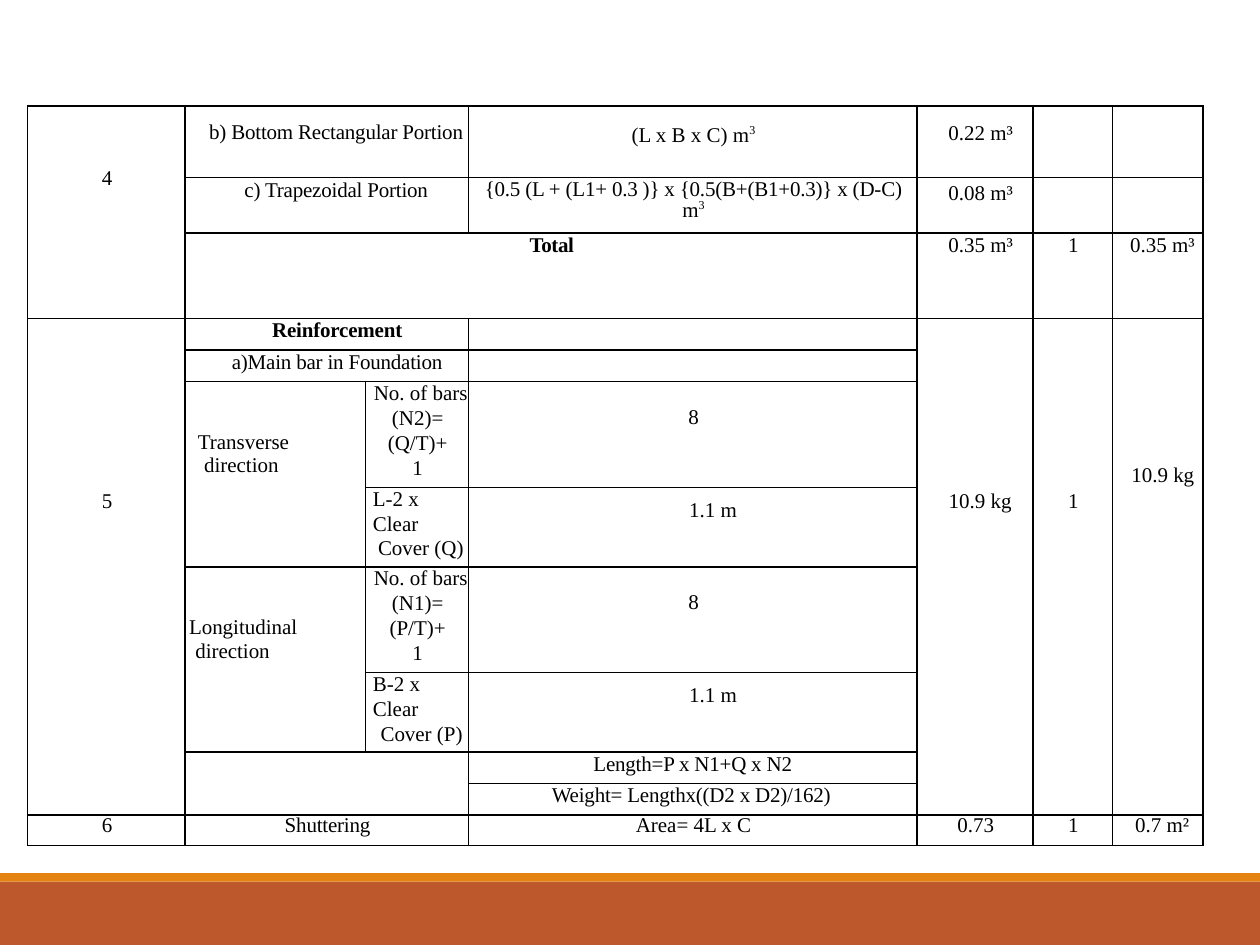
from dataclasses import dataclass

import pptx
import pptx.dml.color
import pptx.enum.shapes
import pptx.enum.text
import pptx.oxml
import pptx.oxml.ns
import pptx.util
from lxml import etree

SLIDE_W, SLIDE_H = 10, 7.5
FONT, TEXT_SIZE = "Times New Roman", 12
TABLE_LEFT, TABLE_TOP = 0.022 * SLIDE_W, 0.112 * SLIDE_H
COLUMNS = [1.25, 1.43, 0.82, 3.56, 0.92, 0.63, 0.72]
ROWS = [0.57, 0.44, 0.68, 0.25, 0.25, 0.84, 0.63, 0.84, 0.63, 0.25, 0.25, 0.24]
ALIGN = {
    "l": pptx.enum.text.PP_ALIGN.LEFT,
    "c": pptx.enum.text.PP_ALIGN.CENTER,
    "r": pptx.enum.text.PP_ALIGN.RIGHT,
}


@dataclass
class Line:
    """One paragraph; indent and hanging are inches, leading is points."""
    text: str
    align: str = "c"
    indent: float = 0.01
    hanging: float = 0
    leading: float = 0
    bold: bool = False
    tracking: float = 0
    superscript: str = ""


@dataclass
class Entry:
    """Cell content at a grid position, with its span and top inset in inches."""
    row: int
    col: int
    lines: list[Line]
    rows: int = 1
    cols: int = 1
    top: float = 0


@dataclass
class Band:
    """Footer band, as shares of the slide height."""
    top: float
    height: float
    color: str


def rgb(value: str) -> pptx.dml.color.RGBColor:
    return pptx.dml.color.RGBColor.from_string(value)


def volume(row: int, amount: str, top: float = 0, leading: float = 0) -> Entry:
    return Entry(row, 4, [Line(amount, "r", leading=leading)], top=top)


def direction(row: int, name: str, indent: float, bars: str, ratio: str,
              side: str, cover: str, cover_indent: float) -> list[Entry]:
    """Four entries describing the bars laid in one direction."""
    heading = Line(f"{name}\vdirection", "l", indent + 0.05, -0.05)
    count = [Line("No. of bars", indent=0.06, leading=13.4),
             Line(f"({bars})=", leading=14.3),
             Line(f"({ratio})+\v1", leading=14.3)]
    length = [Line(f"{side}-2 x", "l", 0.06, leading=13.3),
              Line("Clear", "l", 0.06, leading=14.2),
              Line(f"Cover ({cover})", "l", cover_indent, leading=14.2)]
    return [
        Entry(row, 1, [heading], rows=2, top=0.39),
        Entry(row, 2, count),
        Entry(row, 3, [Line("8")], top=0.19),
        Entry(row + 1, 2, length),
        Entry(row + 1, 3, [Line("1.1 m", "l", 1.75)], top=0.09),
    ]


BANDS = [Band(0.933, 0.067, "BD582C"), Band(0.924, 0.009, "E48312")]
ENTRIES = [
    Entry(0, 0, [Line("4")], rows=3, top=0.48),
    Entry(0, 1, [Line("b) Bottom Rectangular Portion", "l", 0.19, tracking=-0.1)],
          cols=2, top=0.12),
    Entry(0, 3, [Line("(L x B x C) m", superscript="3")], top=0.14),
    volume(0, "0.22 m³", top=0.13),
    Entry(1, 1, [Line("c) Trapezoidal Portion", "l", 0.47, tracking=-0.1)],
          cols=2, top=0.01),
    Entry(1, 3, [Line("{0.5 (L + (L1+ 0.3 )} x {0.5(B+(B1+0.3)} x (D-C)",
                      leading=11.9, tracking=-0.1),
                 Line("m", leading=11.9, superscript="3")], top=0.02),
    volume(1, "0.08 m³", top=0.03),
    Entry(2, 1, [Line("Total", leading=13.6, bold=True, tracking=-0.2)], cols=3),
    volume(2, "0.35 m³", leading=13.6),
    Entry(2, 5, [Line("1", leading=13.6)]),
    Entry(2, 6, [Line("0.35 m³", "l", 0.14, leading=13.6)]),
    Entry(3, 0, [Line("5")], rows=8, top=1.36),
    Entry(3, 1, [Line("Reinforcement", "l", 0.69, leading=13.6, bold=True,
                      tracking=-0.1)], cols=2),
    Entry(3, 4, [Line("10.9 kg", "l", 0.25)], rows=8, top=1.36),
    Entry(3, 5, [Line("1")], rows=8, top=1.36),
    Entry(3, 6, [Line("10.9 kg", "l", 0.15)], rows=8, top=1.15),
    Entry(4, 1, [Line("a)Main bar in Foundation", "l", 0.37, leading=13.6,
                      tracking=-0.1)], cols=2),
    *direction(5, "Transverse", 0.1, "N2", "Q/T", "L", "Q", 0.1),
    *direction(7, "Longitudinal", 0.03, "N1", "P/T", "B", "P", 0.12),
    Entry(9, 1, [], rows=2, cols=2),
    Entry(9, 3, [Line("Length=P x N1+Q x N2", "l", 0.99, leading=13.5,
                      tracking=-0.1)]),
    Entry(10, 3, [Line("Weight= Lengthx((D2 x D2)/162)", "l", 0.66, leading=13.5,
                       tracking=-0.1)]),
    Entry(11, 0, [Line("6", leading=12.6)]),
    Entry(11, 1, [Line("Shuttering", leading=12.6, tracking=-0.1)], cols=2),
    Entry(11, 3, [Line("Area= 4L x C", leading=12.6)]),
    Entry(11, 4, [Line("0.73", leading=12.6)]),
    Entry(11, 5, [Line("1", leading=12.6)]),
    Entry(11, 6, [Line("0.7 m²", "l", 0.18, leading=12.6)]),
]


def add_text(paragraph, text: str, *, bold: bool = False, tracking: float = 0,
             raised: bool = False) -> None:
    for part, piece in enumerate(text.split("\v")):
        if part:
            paragraph.add_line_break()
        run = paragraph.add_run()
        run.text = piece
        run.font.name = FONT
        run.font.size = pptx.util.Pt(TEXT_SIZE)
        run.font.bold = bold
        run.font.color.rgb = rgb("000000")
        properties = run._r.get_or_add_rPr()
        if tracking:
            properties.set("spc", str(round(tracking * 100)))
        if raised:
            properties.set("baseline", "35000")


def write_line(paragraph, line: Line) -> None:
    paragraph.alignment = ALIGN[line.align]
    if line.leading:
        paragraph.line_spacing = pptx.util.Pt(line.leading)
    properties = paragraph._p.get_or_add_pPr()
    properties.set("marL", str(pptx.util.Inches(line.indent)))
    properties.set("indent", str(pptx.util.Inches(line.hanging)))
    if line.align == "r":
        properties.set("marR", str(pptx.util.Inches(0.16)))
    add_text(paragraph, line.text, bold=line.bold, tracking=line.tracking)
    if line.superscript:
        add_text(paragraph, line.superscript, raised=True)


def format_cell(cell) -> None:
    """Clear fill and insets, rule all four sides, keep an empty cell small."""
    cell.fill.background()
    cell.margin_left = cell.margin_right = cell.margin_top = cell.margin_bottom = 0
    properties = cell._tc.get_or_add_tcPr()
    for order, side in enumerate("LRTB"):
        properties.insert(order, pptx.oxml.parse_xml(
            f'<a:ln{side} {pptx.oxml.ns.nsdecls("a")} w="12700"><a:solidFill>'
            f'<a:srgbClr val="000000"/></a:solidFill></a:ln{side}>'))
    paragraph = cell.text_frame.paragraphs[0]
    if not paragraph.runs:
        etree.SubElement(paragraph._p, pptx.oxml.ns.qn("a:endParaRPr"),
                         sz=str(TEXT_SIZE * 100))


def add_band(slide, band: Band) -> None:
    shape = slide.shapes.add_shape(
        pptx.enum.shapes.MSO_SHAPE.RECTANGLE, 0,
        pptx.util.Inches(band.top * SLIDE_H), pptx.util.Inches(SLIDE_W),
        pptx.util.Inches(band.height * SLIDE_H))
    shape.shadow.inherit = False
    shape.fill.solid()
    shape.fill.fore_color.rgb = rgb(band.color)
    shape.line.fill.background()


def add_estimate(slide) -> None:
    table = slide.shapes.add_table(
        len(ROWS), len(COLUMNS), pptx.util.Inches(TABLE_LEFT),
        pptx.util.Inches(TABLE_TOP), pptx.util.Inches(sum(COLUMNS)),
        pptx.util.Inches(sum(ROWS))).table
    table.first_row = table.horz_banding = False
    for column, width in zip(table.columns, COLUMNS):
        column.width = pptx.util.Inches(width)
    for row, height in zip(table.rows, ROWS):
        row.height = pptx.util.Inches(height)
    for cell in table.iter_cells():
        format_cell(cell)
    for entry in ENTRIES:
        cell = table.cell(entry.row, entry.col)
        if entry.rows * entry.cols > 1:
            cell.merge(table.cell(entry.row + entry.rows - 1,
                                  entry.col + entry.cols - 1))
        cell.margin_top = pptx.util.Inches(entry.top)
        frame = cell.text_frame
        for number, line in enumerate(entry.lines):
            write_line(frame.add_paragraph() if number else frame.paragraphs[0], line)


def main() -> None:
    deck = pptx.Presentation()
    deck.slide_width = pptx.util.Inches(SLIDE_W)
    deck.slide_height = pptx.util.Inches(SLIDE_H)
    slide = deck.slides.add_slide(deck.slide_layouts[6])
    for band in BANDS:
        add_band(slide, band)
    add_estimate(slide)
    deck.save("out.pptx")


if __name__ == "__main__":
    main()
